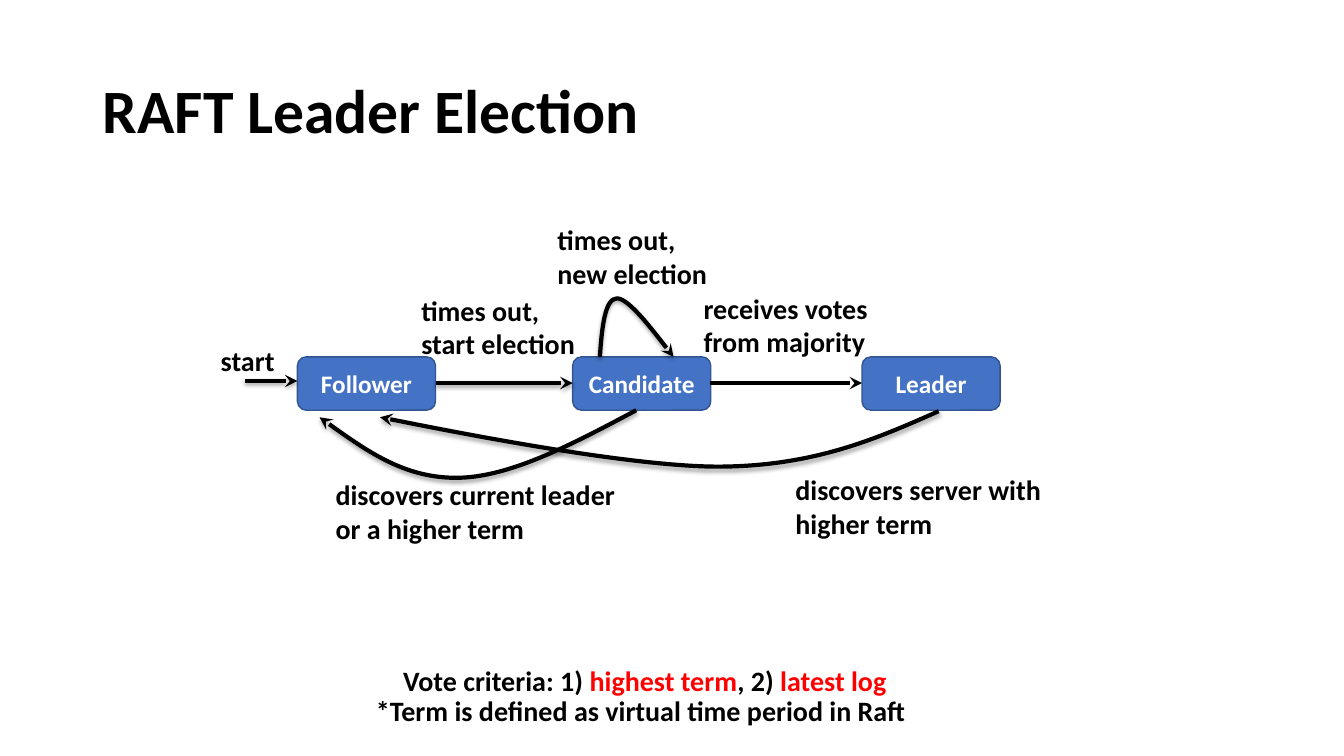
from dataclasses import dataclass

from lxml import etree
from pptx import Presentation
from pptx.dml.color import RGBColor
from pptx.enum.shapes import MSO_CONNECTOR, MSO_SHAPE
from pptx.enum.text import MSO_ANCHOR, PP_ALIGN
from pptx.oxml.ns import qn
from pptx.util import Inches, Pt

BLACK = RGBColor(0x00, 0x00, 0x00)
WHITE = RGBColor(0xFF, 0xFF, 0xFF)
RED = RGBColor(0xFF, 0x00, 0x00)
BLUE = RGBColor(0x44, 0x72, 0xC4)
DARK_BLUE = RGBColor(0x32, 0x54, 0x91)
FONT = "Calibri"
ROUNDED = MSO_SHAPE.ROUNDED_RECTANGLE
STRAIGHT = MSO_CONNECTOR.STRAIGHT
MIDDLE = MSO_ANCHOR.MIDDLE
CENTER, LEFT = PP_ALIGN.CENTER, PP_ALIGN.LEFT
STATE_TOP, STATE_W, STATE_H = 3.54, 1.37, 0.53

Point = tuple[float, float]


@dataclass
class State:
    name: str
    left: float


@dataclass
class Label:
    left: float
    top: float
    width: float
    height: float
    runs: list[tuple[str, RGBColor]]


@dataclass
class Transition:
    """Two points make a straight arrow; a start and triples make Bezier curves."""
    points: list[Point]
    shadow: bool = True


STATES = [State("Follower", 2.95), State("Candidate", 5.68), State("Leader", 8.55)]

TRANSITIONS = [
    Transition([(2.43, 3.78), (2.95, 3.78)]),
    Transition([(4.32, 3.8), (5.68, 3.8)]),
    Transition([(7.04, 3.8), (8.55, 3.8)], shadow=False),
    Transition([(5.95, 3.54), (5.97, 3.25), (6, 2.96), (6.12, 2.96),
                (6.24, 2.96), (6.68, 3.54), (6.68, 3.54)]),
    Transition([(9.31, 4.08), (8.7, 4.35), (8.09, 4.62), (7.16, 4.63),
                (6.24, 4.64), (3.77, 4.14), (3.77, 4.14)]),
    Transition([(6.31, 4.07), (5.69, 4.4), (5.07, 4.73), (4.55, 4.74),
                (4.03, 4.75), (3.6, 4.45), (3.17, 4.14)]),
]

LABELS = [
    Label(4.08, 2.86, 1.85, 0.63, [("times out,\nstart election", BLACK)]),
    Label(6.88, 2.84, 1.95, 0.63, [("receives votes\nfrom majority", BLACK)]),
    Label(5.43, 2.16, 1.8, 0.63, [("times out,\nnew election", BLACK)]),
    Label(7.79, 4.64, 2.75, 0.63, [("discovers server with\vhigher term", BLACK)]),
    Label(3.23, 4.69, 3.1, 0.63, [("discovers current leader\vor a higher term", BLACK)]),
    Label(2.09, 3.36, 0.85, 0.36, [("start", BLACK)]),
    Label(3.63, 6.83, 5.5, 0.6,
          [("*Term is defined as virtual time period in Raft", BLACK)]),
    Label(3.9, 6.53, 5.1, 0.6,
          [("Vote criteria: 1) ", BLACK), ("highest term", RED),
           (", 2) ", BLACK), ("latest log", RED)]),
]


def format_text(tf, size: float, color: RGBColor, align=LEFT) -> None:
    for p in tf.paragraphs:
        p.alignment = align
        for r in p.runs:
            r.font.name = FONT
            r.font.size = Pt(size)
            r.font.bold = True
            r.font.color.rgb = color


def add_title(slide, text: str) -> None:
    sp = slide.shapes.title
    sp.left, sp.top = Inches(0.92), Inches(0.4)
    sp.width, sp.height = Inches(11.8), Inches(1.45)
    tf = sp.text_frame
    tf.text = text
    tf.vertical_anchor = MIDDLE
    tf.paragraphs[0].line_spacing = 0.9
    format_text(tf, 44, BLACK)


def add_state(slide, state: State) -> None:
    sp = slide.shapes.add_shape(ROUNDED, Inches(state.left), Inches(STATE_TOP),
                                Inches(STATE_W), Inches(STATE_H))
    sp.shadow.inherit = False
    sp.fill.solid()
    sp.fill.fore_color.rgb = BLUE
    sp.line.color.rgb = DARK_BLUE
    sp.line.width = Pt(1)
    tf = sp.text_frame
    tf.text = state.name
    tf.vertical_anchor = MIDDLE
    format_text(tf, 18, WHITE, CENTER)


def add_label(slide, label: Label) -> None:
    tf = slide.shapes.add_textbox(Inches(label.left), Inches(label.top),
                                  Inches(label.width), Inches(label.height)).text_frame
    tf.word_wrap = True
    tf.text = label.runs[0][0]
    format_text(tf, 20, label.runs[0][1])
    for text, color in label.runs[1:]:
        r = tf.paragraphs[0].add_run()
        r.text = text
        r.font.name = FONT
        r.font.size = Pt(20)
        r.font.bold = True
        r.font.color.rgb = color


def add_curve(slide, points: list[Point]):
    """Draw a freeform whose line segments become cubic Bezier curves."""
    (x, y), *rest = [(Inches(px), Inches(py)) for px, py in points]
    builder = slide.shapes.build_freeform(x, y)
    builder.add_line_segments(rest, close=False)
    sp = builder.convert_to_shape()
    sp.fill.background()
    outline = next(sp._element.iter(qn("a:path")))
    segments = outline.findall(qn("a:lnTo"))
    for i in range(0, len(segments), 3):
        curve = etree.SubElement(outline, qn("a:cubicBezTo"))
        for segment in segments[i:i + 3]:
            curve.append(segment[0])
            outline.remove(segment)
    return sp


def add_transition(slide, transition: Transition) -> None:
    points = transition.points
    if len(points) == 2:
        ends = [Inches(v) for point in points for v in point]
        sp = slide.shapes.add_connector(STRAIGHT, *ends)
    else:
        sp = add_curve(slide, points)
    sp.line.color.rgb = BLACK
    sp.line.width = Pt(3)
    props = sp._element.spPr
    etree.SubElement(props.find(qn("a:ln")), qn("a:tailEnd"), type="stealth")
    effects = etree.SubElement(props, qn("a:effectLst"))
    if transition.shadow:
        shadow = etree.SubElement(effects, qn("a:outerShdw"), blurRad=str(Pt(3.1)),
                                  dist=str(Pt(1.7)), dir="5400000", rotWithShape="0")
        color = etree.SubElement(shadow, qn("a:srgbClr"), val=str(BLACK))
        etree.SubElement(color, qn("a:alpha"), val="35000")


def main() -> None:
    prs = Presentation()
    prs.slide_width, prs.slide_height = Inches(13.33), Inches(7.5)
    slide = prs.slides.add_slide(prs.slide_layouts[5])
    add_title(slide, "RAFT Leader Election")
    for state in STATES:
        add_state(slide, state)
    for transition in TRANSITIONS:
        add_transition(slide, transition)
    for label in LABELS:
        add_label(slide, label)
    prs.save("out.pptx")


if __name__ == "__main__":
    main()
